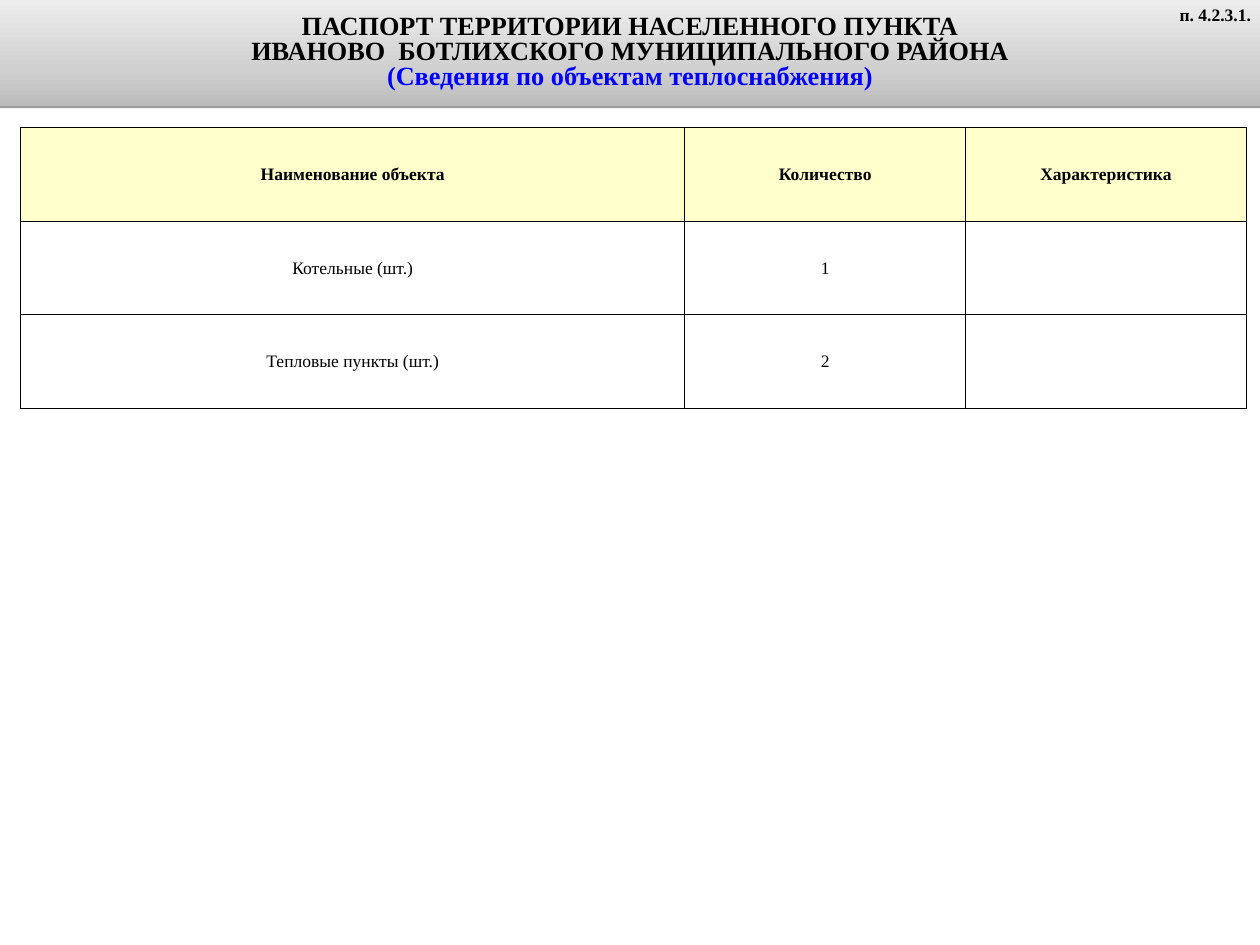
from lxml import etree
from pptx import Presentation
from pptx.dml.color import RGBColor
from pptx.enum.text import MSO_ANCHOR, MSO_AUTO_SIZE, PP_ALIGN
from pptx.oxml import parse_xml
from pptx.oxml.ns import nsdecls
from pptx.util import Inches, Pt

CENTER, RIGHT = PP_ALIGN.CENTER, PP_ALIGN.RIGHT
MIDDLE = MSO_ANCHOR.MIDDLE
NO_AUTOFIT = MSO_AUTO_SIZE.NONE
TITLE_ONLY = 5
FONT = "Times New Roman"
COLORS = {
    "text": "000000",
    "subject": "0000FF",
    "header": "FFFFCC",
    "body": "FFFFFF",
    "border": "000000",
    "shadow": "000000",
    "band_dark": "BCBCBC",
    "band_mid": "D0D0D0",
    "band_light": "EDEDED",
}


def write(paragraph, text, size, bold=True, color="text", align=CENTER):
    paragraph.alignment = align
    run = paragraph.add_run()
    run.text = text
    font_format = {"name": FONT, "size": Pt(size), "bold": bold}
    for attribute, value in font_format.items():
        setattr(run.font, attribute, value)
    run.font.color.rgb = RGBColor.from_string(COLORS[color])


def add_borders(cell, width):
    """Draw all four sides of a cell; must run before the cell is filled."""
    properties = cell._tc.get_or_add_tcPr()
    for side in ("lnL", "lnR", "lnT", "lnB"):
        properties.append(parse_xml(
            f'<a:{side} {nsdecls("a")} w="{Pt(width)}"><a:solidFill>'
            f'<a:srgbClr val="{COLORS["border"]}"/></a:solidFill></a:{side}>'))


prs = Presentation()
prs.slide_width, prs.slide_height = Inches(14), Inches(10.5)
slide = prs.slides.add_slide(prs.slide_layouts[TITLE_ONLY])

# Title band with gradient and shadow
title = slide.shapes.title
title_place = {"left": 0, "top": 0, "width": 14, "height": 1.18}
for attribute, value in title_place.items():
    setattr(title, attribute, Inches(value))

band = title._element.spPr
gradient = parse_xml(
    f'<a:gradFill {nsdecls("a")} rotWithShape="1"><a:gsLst/>'
    '<a:lin ang="16200000" scaled="0"/></a:gradFill>')
for percent, color in ((0, "band_dark"), (35, "band_mid"), (100, "band_light")):
    etree.SubElement(gradient[0], gradient.tag.replace("gradFill", "gs"),
                     pos=str(percent * 1000)).append(
        parse_xml(f'<a:srgbClr {nsdecls("a")} val="{COLORS[color]}"/>'))
band.append(gradient)
band.append(parse_xml(
    f'<a:effectLst {nsdecls("a")}><a:outerShdw blurRad="0" dist="{Pt(1.6)}" '
    f'dir="5400000" rotWithShape="0"><a:srgbClr val="{COLORS["shadow"]}">'
    '<a:alpha val="38000"/></a:srgbClr></a:outerShdw></a:effectLst>'))

heading = title.text_frame
heading.auto_size = NO_AUTOFIT
heading.word_wrap = True
heading.vertical_anchor = MIDDLE
title_lines = [
    ("ПАСПОРТ ТЕРРИТОРИИ НАСЕЛЕННОГО ПУНКТА", "text"),
    ("ИВАНОВО  БОТЛИХСКОГО МУНИЦИПАЛЬНОГО РАЙОНА", "text"),
    ("(Сведения по объектам теплоснабжения)", "subject"),
]
for index, (line, color) in enumerate(title_lines):
    paragraph = heading.add_paragraph() if index else heading.paragraphs[0]
    paragraph.line_spacing = 0.8
    paragraph.space_before = Pt(0)
    write(paragraph, line, 21, color=color)

# Heat supply facilities
rows = [
    ("Наименование объекта", "Количество", "Характеристика"),
    ("Котельные (шт.)", "1", ""),
    ("Тепловые пункты (шт.)", "2", ""),
]
column_widths = (7.38, 3.12, 3.12)
row_height = 1.04
facilities = slide.shapes.add_table(
    len(rows), len(column_widths), Inches(0.23), Inches(1.42),
    Inches(sum(column_widths)), Inches(row_height * len(rows))).table
for column, width in zip(facilities.columns, column_widths):
    column.width = Inches(width)

cell_format = {"vertical_anchor": MIDDLE}
for side in ("left", "right", "top", "bottom"):
    cell_format[f"margin_{side}"] = Inches(0.03)
for r, row in enumerate(rows):
    facilities.rows[r].height = Inches(row_height)
    for c, text in enumerate(row):
        cell = facilities.cell(r, c)
        for attribute, value in cell_format.items():
            setattr(cell, attribute, value)
        add_borders(cell, 1)
        cell.fill.solid()
        cell.fill.fore_color.rgb = RGBColor.from_string(
            COLORS["body" if r else "header"])
        if text:
            write(cell.text_frame.paragraphs[0], text, 14, bold=r == 0)

# Section number
section = slide.shapes.add_textbox(
    Inches(12.83), Inches(0), Inches(1.17), Inches(0.33)).text_frame
section.word_wrap = True
write(section.paragraphs[0], "п. 4.2.3.1.", 14, align=RIGHT)

prs.save("out.pptx")
